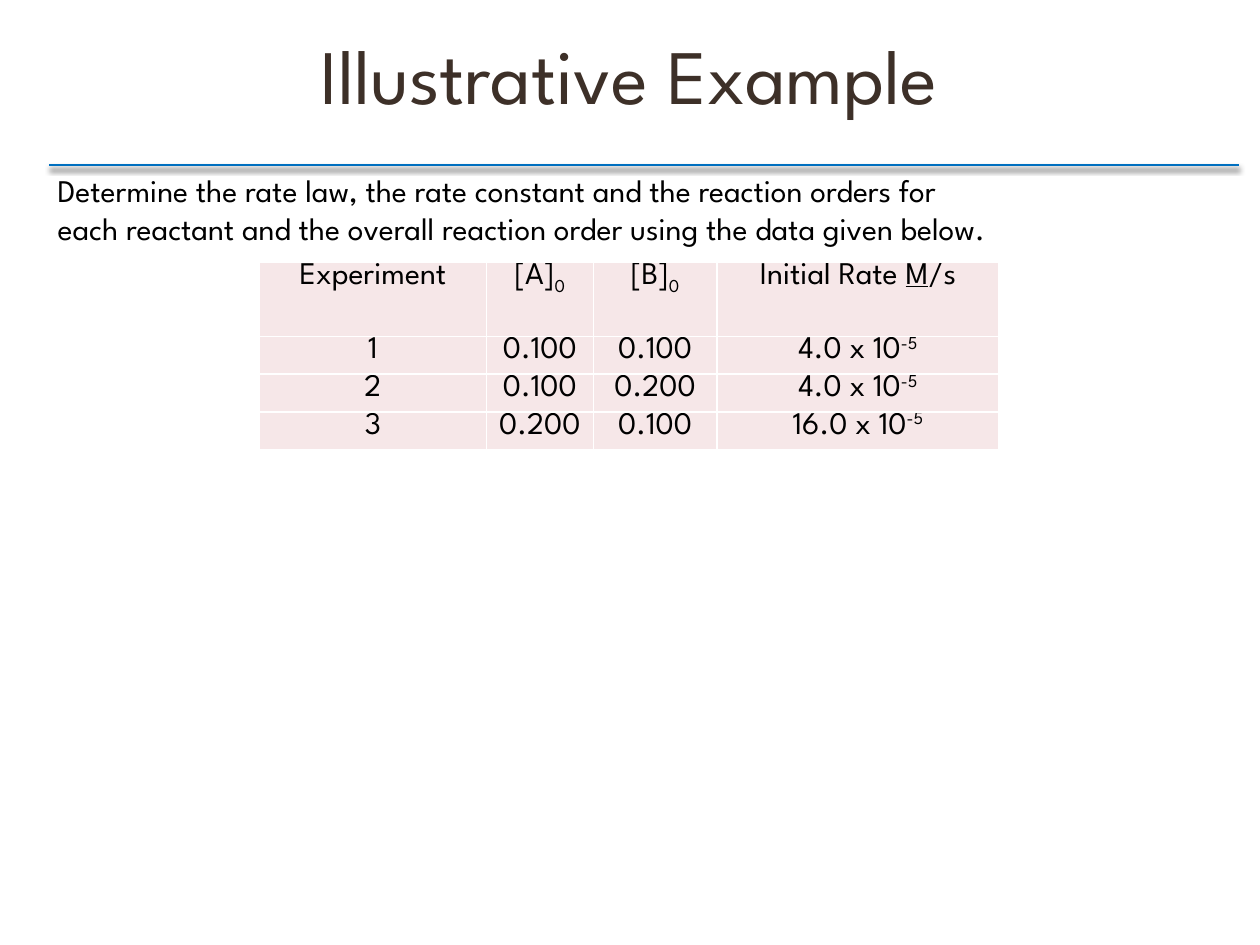
"""Build the rate law example slide with its table of initial rates."""
from lxml.etree import SubElement
from pptx import Presentation
from pptx.dml.color import RGBColor
from pptx.enum.shapes import MSO_CONNECTOR
from pptx.enum.text import MSO_ANCHOR, PP_ALIGN
from pptx.oxml.ns import qn
from pptx.util import Inches, Pt

FONT = "League Spartan"
COLORS = {"title": "3D3028", "text": "000000", "rule": "0070C0",
          "cell": "F6E7E8", "border": "FFFFFF", "shadow": "000000"}
TITLE = "Illustrative Example"
QUESTION = [
    "Determine the rate law, the rate constant and the reaction orders for",
    "each reactant and the overall reaction order using the data given below.",
]
SUB, SUP, UNDERLINE = "sub", "sup", "underline"
BASELINES = {SUB: "-25000", SUP: "30000"}
HEADER = [["Experiment"], ["[A]", ("0", SUB)], ["[B]", ("0", SUB)],
          ["Initial Rate ", ("M", UNDERLINE), "/s"]]
TRIALS = [
    ("1", "0.100", "0.100", "4.0"),
    ("2", "0.100", "0.200", "4.0"),
    ("3", "0.200", "0.100", "16.0"),
]
COLUMN_WIDTHS = [1.8, 0.85, 0.98, 2.24]
ROW_HEIGHTS = [0.59] + [0.29] * len(TRIALS)
CELL_FORMAT = {"margin_left": Inches(0.07), "margin_right": Inches(0.07),
               "margin_top": 0, "margin_bottom": 0}


def rgb(name):
    return RGBColor.from_string(COLORS[name])


def add_run(paragraph, piece, size=18, color="text"):
    text, style = (piece, None) if isinstance(piece, str) else piece
    run = paragraph.add_run()
    run.text = text
    for name, value in {"name": FONT, "size": Pt(size)}.items():
        setattr(run.font, name, value)
    run.font.color.rgb = rgb(color)
    if style == UNDERLINE:
        run.font.underline = True
    elif style:
        run.font._element.set("baseline", BASELINES[style])


def add_text(slide, box, lines, size=18, color="text", anchor=MSO_ANCHOR.TOP, **layout):
    frame = slide.shapes.add_textbox(*map(Inches, box)).text_frame
    frame.word_wrap = True
    frame.vertical_anchor = anchor
    for index, line in enumerate(lines):
        paragraph = frame.add_paragraph() if index else frame.paragraphs[0]
        for name, value in layout.items():
            setattr(paragraph, name, value)
        add_run(paragraph, line, size, color)


def add_rule(slide, left, right, y):
    rule = slide.shapes.add_connector(
        MSO_CONNECTOR.STRAIGHT, *map(Inches, (left, y, right, y)))
    rule.line.color.rgb = rgb("rule")
    rule.line.width = Pt(1.5)
    effects = SubElement(rule._element.spPr, qn("a:effectLst"))
    shadow = SubElement(effects, qn("a:outerShdw"), blurRad=str(Pt(3)),
                        dist=str(Pt(2.4)), dir="5400000", rotWithShape="0")
    color = SubElement(shadow, qn("a:srgbClr"), val=COLORS["shadow"])
    SubElement(color, qn("a:alpha"), val="45000")


def format_cell(cell, pieces):
    for name, value in CELL_FORMAT.items():
        setattr(cell, name, value)
    properties = cell._tc.get_or_add_tcPr()
    for side in ("lnL", "lnR", "lnT", "lnB"):
        border = SubElement(properties, qn(f"a:{side}"), w=str(Pt(1)))
        SubElement(SubElement(border, qn("a:solidFill")), qn("a:srgbClr"),
                   val=COLORS["border"])
    cell.fill.solid()
    cell.fill.fore_color.rgb = rgb("cell")
    paragraph = cell.text_frame.paragraphs[0]
    paragraph.alignment = PP_ALIGN.CENTER
    for piece in pieces:
        add_run(paragraph, piece)


def add_rate_table(slide, left, top):
    rows = [HEADER] + [
        [[trial], [a], [b], [f"{rate} x 10", ("-5", SUP)]]
        for trial, a, b, rate in TRIALS]
    size = (sum(COLUMN_WIDTHS), sum(ROW_HEIGHTS))
    table = slide.shapes.add_table(
        len(rows), len(HEADER), *map(Inches, (left, top, *size))).table
    for column, width in zip(table.columns, COLUMN_WIDTHS):
        column.width = Inches(width)
    for row, height, contents in zip(table.rows, ROW_HEIGHTS, rows):
        row.height = Inches(height)
        for cell, pieces in zip(row.cells, contents):
            format_cell(cell, pieces)


def main():
    deck = Presentation()
    deck.slide_width, deck.slide_height = Inches(10), Inches(7.5)
    slide = deck.slides.add_slide(deck.slide_layouts[6])
    add_text(slide, (0, 0.11, 9.99, 1.08), [TITLE], 44, "title", MSO_ANCHOR.MIDDLE,
             alignment=PP_ALIGN.CENTER, line_spacing=0.8)
    add_rule(slide, 0.39, 9.83, 1.31)
    add_rate_table(slide, 2.06, 2.08)
    add_text(slide, (0.36, 1.31, 9.26, 1.01), QUESTION)
    deck.save("out.pptx")


if __name__ == "__main__":
    main()
